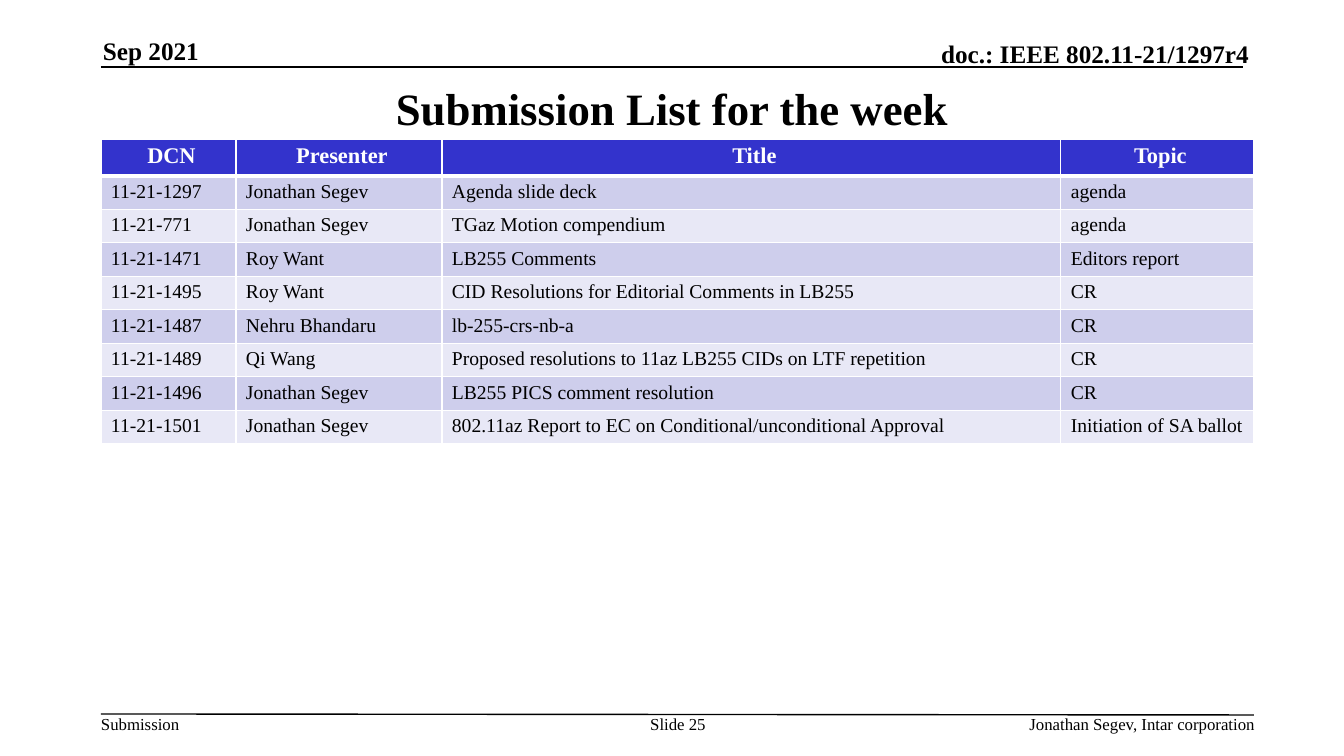
from lxml.etree import SubElement
from pptx import Presentation
from pptx.dml.color import RGBColor
from pptx.enum.shapes import MSO_CONNECTOR
from pptx.enum.text import MSO_ANCHOR as Anchor, PP_ALIGN as Align
from pptx.oxml import parse_xml
from pptx.oxml.ns import nsdecls, qn
from pptx.util import Pt

EMU_PER_PX = 914400 / 100.8
FONT = "Times New Roman"
BLACK, WHITE = "000000", "FFFFFF"
HEADING_FILL = "3333CC"
BAND_FILLS = ["CECEEC", "E8E8F6"]
COLUMN_WIDTHS = [135, 206, 619, 193]
HEADING_HEIGHT, ENTRY_HEIGHT = 34, 31
HEADINGS = ["DCN", "Presenter", "Title", "Topic"]
SUBMISSIONS = [
    ["11-21-1297", "Jonathan Segev", "Agenda slide deck", "agenda"],
    ["11-21-771", "Jonathan Segev", "TGaz Motion compendium", "agenda"],
    ["11-21-1471", "Roy Want", "LB255 Comments", "Editors report"],
    ["11-21-1495", "Roy Want", "CID Resolutions for Editorial Comments in LB255", "CR"],
    ["11-21-1487", "Nehru Bhandaru", "lb-255-crs-nb-a", "CR"],
    ["11-21-1489", "Qi Wang", "Proposed resolutions to 11az LB255 CIDs on LTF repetition", "CR"],
    ["11-21-1496", "Jonathan Segev", "LB255 PICS comment resolution", "CR"],
    ["11-21-1501", "Jonathan Segev",
     "802.11az Report to EC on Conditional/unconditional Approval", "Initiation of SA ballot"],
]


def px(length):
    return round(length * EMU_PER_PX)


def color(hex_value):
    return RGBColor.from_string(hex_value)


def style_text(frame, size, hex_value=BLACK, bold=False, align=Align.LEFT):
    paragraph = frame.paragraphs[0]
    paragraph.alignment = align
    font = paragraph.runs[0].font
    font.name, font.size, font.bold = FONT, Pt(size), bold
    font.color.rgb = color(hex_value)


def add_label(slide, box, text, size, bold=False, align=Align.LEFT, anchor=Anchor.TOP):
    frame = slide.shapes.add_textbox(*map(px, box)).text_frame
    frame.margin_left = frame.margin_right = frame.margin_top = frame.margin_bottom = 0
    frame.word_wrap = True
    frame.vertical_anchor = anchor
    frame.text = text
    style_text(frame, size, bold=bold, align=align)


def add_rule(slide, start, end):
    rule = slide.shapes.add_connector(MSO_CONNECTOR.STRAIGHT, *map(px, start + end))
    rule.line.color.rgb = color(BLACK)
    rule.line.width = Pt(1)
    SubElement(rule._element.spPr, qn("a:effectLst"))


def set_borders(cell, top, bottom):
    properties = cell._tc.get_or_add_tcPr()
    widths = {"lnL": 1, "lnR": 1, "lnT": top, "lnB": bottom}
    for position, (side, width) in enumerate(widths.items()):
        properties.insert(position, parse_xml(
            f'<a:{side} {nsdecls("a")} w="{Pt(width)}"><a:solidFill>'
            f'<a:srgbClr val="{WHITE}"/></a:solidFill></a:{side}>'))


def build_header(slide, box):
    left, top, width, height = box
    bottom = top + height
    add_rule(slide, (left, bottom), (left + width - 10, bottom))
    add_label(slide, (left + 2, top, 275, 30), "Sep 2021", 18, True, anchor=Anchor.BOTTOM)
    add_label(slide, (left + 634, top + 3, 514, 30), "doc.: IEEE 802.11-21/1297r4",
              18, True, Align.RIGHT, Anchor.BOTTOM)


def build_title(slide, box):
    add_label(slide, box, "Submission List for the week", 32, True, Align.CENTER, Anchor.MIDDLE)


def build_submissions(slide, box):
    rows = [HEADINGS] + SUBMISSIONS
    table = slide.shapes.add_table(len(rows), len(HEADINGS), *map(px, box)).table
    for column, width in zip(table.columns, COLUMN_WIDTHS):
        column.width = px(width)
    for index, entries in enumerate(rows):
        is_heading = index == 0
        table.rows[index].height = px(HEADING_HEIGHT if is_heading else ENTRY_HEIGHT)
        for cell, entry in zip(table.rows[index].cells, entries):
            cell.text = entry
            cell.margin_left = px(10)
            cell.margin_right = px(4 if is_heading else 10)
            cell.margin_top = cell.margin_bottom = px(5)
            cell.fill.solid()
            fill = HEADING_FILL if is_heading else BAND_FILLS[(index - 1) % 2]
            cell.fill.fore_color.rgb = color(fill)
            set_borders(cell, 3 if index == 1 else 1, 3 if is_heading else 1)
            if is_heading:
                style_text(cell.text_frame, 16, WHITE, True, Align.CENTER)
            else:
                style_text(cell.text_frame, 14)


def build_footer(slide, box):
    left, top, width, height = box
    add_rule(slide, (left, top), (left + width, top + 1))
    add_label(slide, (left, top, 80, height), "Submission", 12)
    add_label(slide, (left + 538, top, 78, height), "Slide 25", 12, align=Align.CENTER)
    add_label(slide, (left + width - 467, top, 468, height),
              "Jonathan Segev, Intar corporation", 12, align=Align.RIGHT)


def main():
    deck = Presentation()
    deck.slide_width, deck.slide_height = px(1344), px(756)
    slide = deck.slides.add_slide(deck.slide_layouts[6])
    build_header(slide, (101, 36, 1152, 31))
    build_title(slide, (101, 76, 1142, 64))
    table_height = HEADING_HEIGHT + ENTRY_HEIGHT * len(SUBMISSIONS)
    build_submissions(slide, (101, 139, sum(COLUMN_WIDTHS), table_height))
    build_footer(slide, (101, 714, 1153, 20))
    deck.save("out.pptx")


if __name__ == "__main__":
    main()
